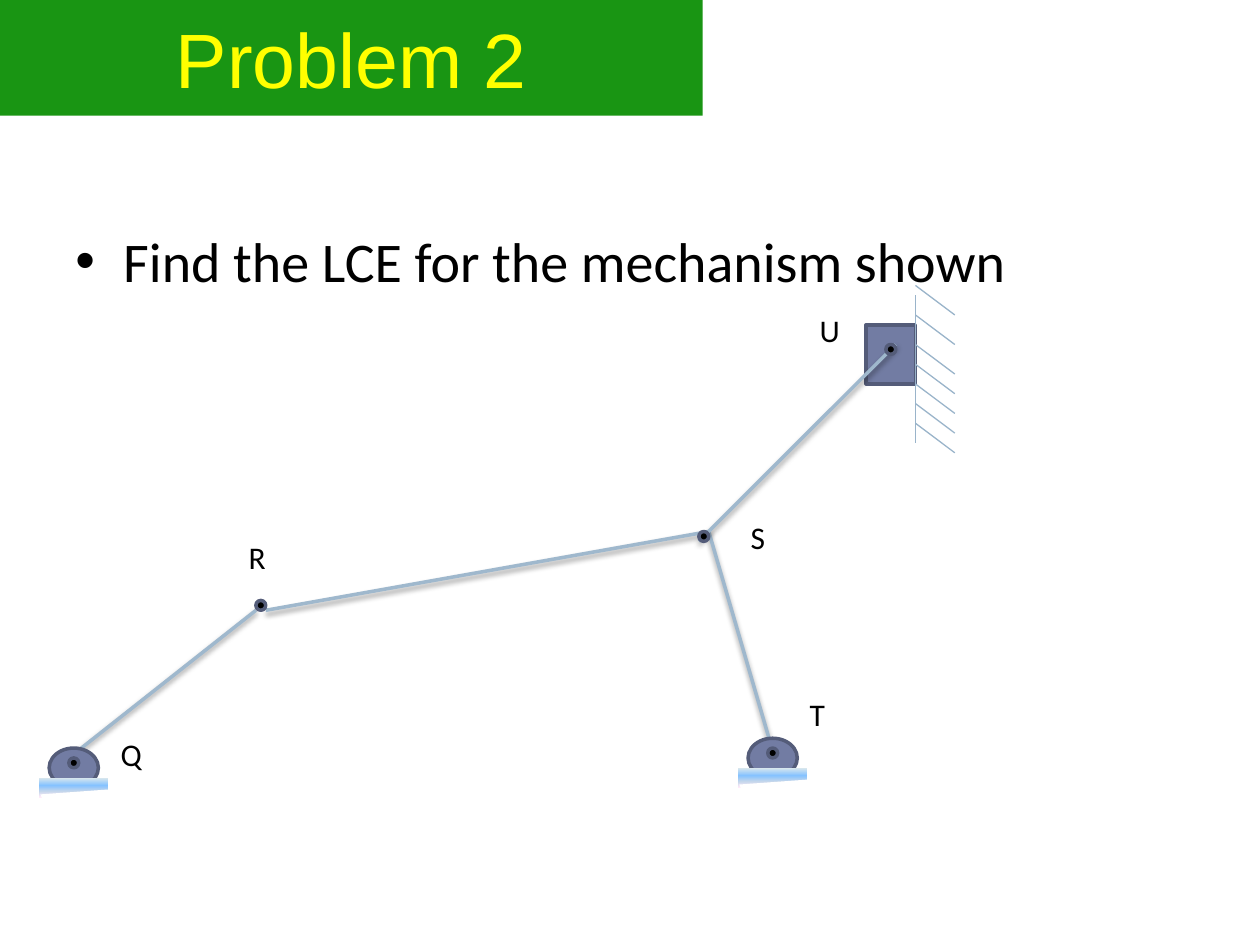
import typing

import lxml.etree
import pptx
import pptx.dml.color
import pptx.enum.shapes
import pptx.enum.text
import pptx.oxml.ns
import pptx.util

CELL = pptx.util.Inches(10) // 128  # the slide is 128 columns by 96 rows
SHAPE = pptx.enum.shapes.MSO_SHAPE
ANCHOR = pptx.enum.text.MSO_ANCHOR
ALIGN = pptx.enum.text.PP_ALIGN
STEEL, STEEL_EDGE, LINK, WALL = "727CA3", "545C79", "9FB8CD", "9AB4CA"
GROUND_STOPS = ((0, "DDE9EC"), (40, "85C2FF"), (70, "C4D6EB"), (100, "FFEBFA"))
# Outline of the white patch that bevels a ground plate, from the plate's corner
PATCH = ((0.1, 1.7), (0.5, 2.6), (1, 2.6), (1.6, 2.9), (5.1, 2.8),
         (5.7, 2.5), (6.2, 2.6), (7.4, 2.3), (7.1, 2.1), (7, 1.2))


class Area(typing.NamedTuple):
    column: float
    row: float
    columns: float
    rows: float


class Line(typing.NamedTuple):
    column: float
    row: float
    end_column: float
    end_row: float


class Label(typing.NamedTuple):
    text: str
    column: float
    row: float


LINKS = (Line(7, 77, 26, 62), Line(27, 62, 72, 54),
         Line(72, 54, 79, 78), Line(71, 55, 91, 35))
JOINTS = ((26, 61), (90, 35), (71, 54))
SUPPORTS = ((4, 76), (75, 75))
HATCH_ROWS = (29, 32, 35, 37, 39, 41, 43)
LABELS = (Label("Q", 11, 74), Label("R", 24, 54), Label("T", 81, 70),
          Label("S", 75, 52), Label("U", 82, 31))


def cells(values: typing.Iterable[float]) -> list[int]:
    return [round(value * CELL) for value in values]


def colour(value: str) -> pptx.dml.color.RGBColor:
    return pptx.dml.color.RGBColor.from_string(value)


def add_child(parent, tag: str, **attributes):
    return lxml.etree.SubElement(parent, pptx.oxml.ns.qn(tag), attributes)


def paint(shape, fill: str, edge: str | None = None) -> None:
    shape.shadow.inherit = False
    shape.fill.solid()
    shape.fill.fore_color.rgb = colour(fill)
    if edge:
        shape.line.color.rgb = colour(edge)
        shape.line.width = pptx.util.Pt(2)
    else:
        shape.line.fill.background()


def add_solid(page, kind, area: Area, fill: str, edge: str | None = None):
    shape = page.shapes.add_shape(kind, *cells(area))
    paint(shape, fill, edge)
    return shape


def add_pin(page, column: float, row: float) -> None:
    add_solid(page, SHAPE.OVAL, Area(column, row, 1, 1), "000000", STEEL_EDGE)


def add_line(page, line: Line, stroke: str, points: float, shadowed: bool = False) -> None:
    straight = pptx.enum.shapes.MSO_CONNECTOR.STRAIGHT
    connector = page.shapes.add_connector(straight, *cells(line))
    connector.line.color.rgb = colour(stroke)
    connector.line.width = pptx.util.Pt(points)
    effects = add_child(connector._element.spPr, "a:effectLst")
    if shadowed:
        shadow = add_child(effects, "a:outerShdw", blurRad="40000", dist="20000",
                           dir="5400000", rotWithShape="0")
        black = add_child(shadow, "a:srgbClr", val="000000")
        add_child(black, "a:alpha", val="38000")


def add_ground(page, area: Area) -> None:
    """Add a plate shaded from top to bottom in four colours."""
    plate = add_solid(page, SHAPE.RECTANGLE, area, "FFFFFF")
    plate.fill.gradient()
    plate.fill.gradient_angle = 270
    stops = plate._element.spPr.find(".//" + pptx.oxml.ns.qn("a:gsLst"))
    for stop in list(stops):
        stops.remove(stop)
    for percent, value in GROUND_STOPS:
        stop = add_child(stops, "a:gs", pos=str(percent * 1000))
        add_child(stop, "a:srgbClr", val=value)


def add_support(page, column: float, row: float) -> None:
    """Add a fixed pivot: dome, pin, ground plate and white bevel."""
    add_solid(page, SHAPE.OVAL, Area(column + 1, row, 5, 4), STEEL, STEEL_EDGE)
    add_pin(page, column + 3, row + 1)
    add_ground(page, Area(column, row + 3, 7, 2))
    points = [tuple(cells((column + x, row + 3 + y))) for x, y in PATCH]
    builder = page.shapes.build_freeform(*points[0])
    builder.add_line_segments(points[1:], close=True)
    paint(builder.convert_to_shape(), "FFFFFF")


def write(shape, text: str, font: str, size: float, value: str):
    para = shape.text_frame.paragraphs[0]
    span = para.add_run()
    span.text = text
    span.font.name = font
    span.font.size = pptx.util.Pt(size)
    span.font.color.rgb = colour(value)
    return para


def add_title(page) -> None:
    banner = add_solid(page, SHAPE.RECTANGLE, Area(0, 0, 71.4, 11.75), "199513")
    banner.text_frame.vertical_anchor = ANCHOR.MIDDLE
    write(banner, "Problem 2", "Arial", 44, "FFFF00").alignment = ALIGN.CENTER


def add_task(page) -> None:
    box = page.shapes.add_textbox(*cells(Area(6.4, 22.4, 115.2, 63.4)))
    box.text_frame.word_wrap = True
    para = write(box, "Find the LCE for the mechanism shown", "Calibri", 32, "000000")
    properties = para._p.get_or_add_pPr()
    indent = pptx.util.Inches(0.38)
    properties.set("marL", str(indent))
    properties.set("indent", str(-indent))
    add_child(properties, "a:buFont", typeface="Arial")
    add_child(properties, "a:buChar", char="•")


def add_label(page, label: Label) -> None:
    box = page.shapes.add_textbox(*cells(Area(label.column, label.row, 5, 6.5)))
    box.text_frame.word_wrap = True
    box.text_frame.auto_size = pptx.enum.text.MSO_AUTO_SIZE.SHAPE_TO_FIT_TEXT
    write(box, label.text, "Calibri", 18, "000000")


def main() -> None:
    deck = pptx.Presentation()
    deck.slide_width = 128 * CELL
    deck.slide_height = 96 * CELL
    page = deck.slides.add_slide(deck.slide_layouts[6])
    add_solid(page, SHAPE.RECTANGLE, Area(88, 33, 5, 6), STEEL, STEEL_EDGE)
    add_title(page)
    add_task(page)
    for link in LINKS:
        add_line(page, link, LINK, 2, shadowed=True)
    for joint in JOINTS:
        add_pin(page, *joint)
    for support in SUPPORTS:
        add_support(page, *support)
    add_line(page, Line(93, 30, 93, 45), WALL, 0.75)
    for row in HATCH_ROWS:
        add_line(page, Line(93, row, 97, row + 3), WALL, 0.75)
    for label in LABELS:
        add_label(page, label)
    deck.save("out.pptx")


if __name__ == "__main__":
    main()
